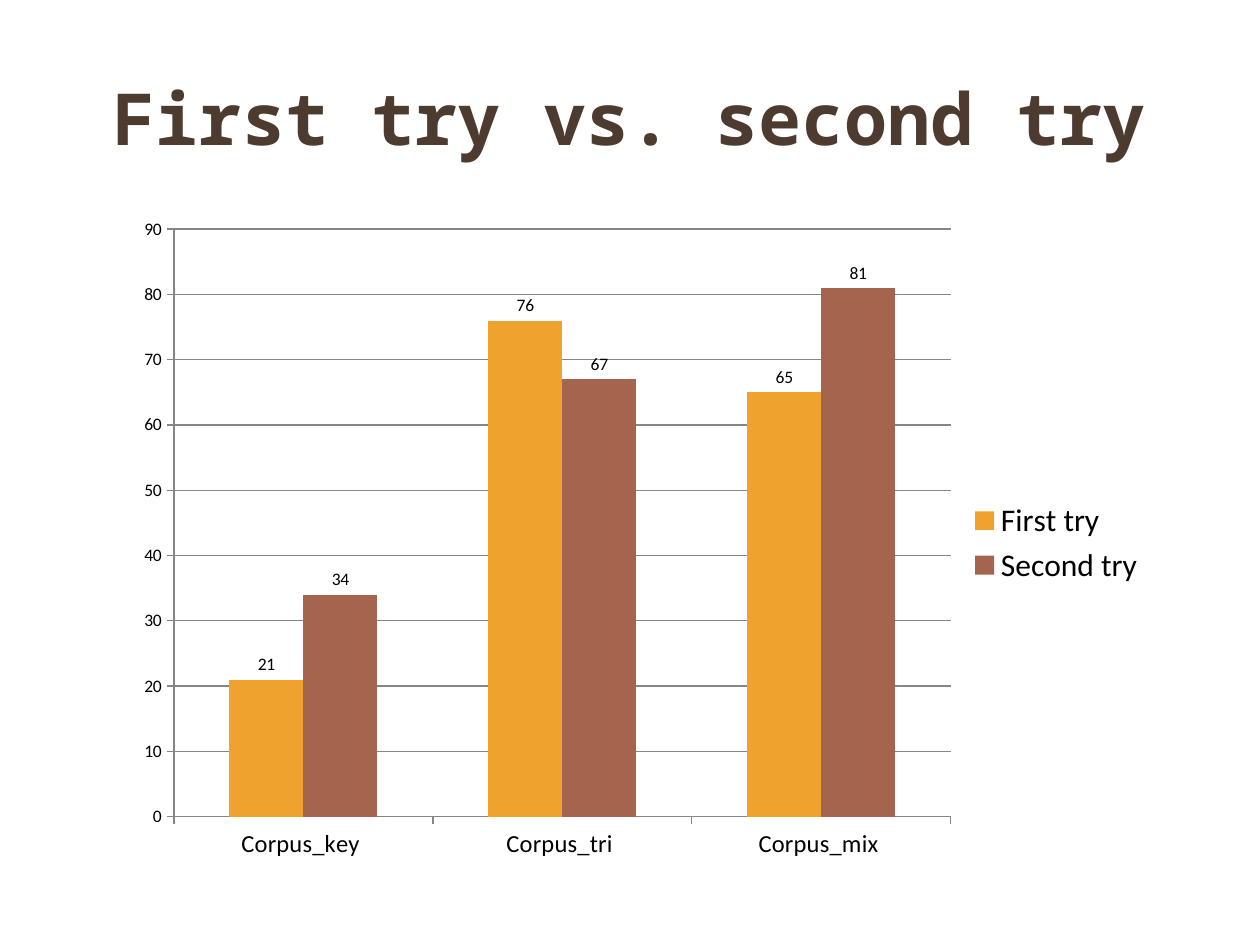
from dataclasses import dataclass

from lxml.etree import SubElement
from pptx import Presentation
from pptx.chart.data import CategoryChartData
from pptx.dml.color import RGBColor
from pptx.enum.chart import XL_CHART_TYPE as ChartType
from pptx.enum.chart import XL_LABEL_POSITION as LabelPosition
from pptx.enum.chart import XL_LEGEND_POSITION as LegendPosition
from pptx.enum.chart import XL_TICK_MARK as TickMark
from pptx.enum.text import MSO_ANCHOR, PP_ALIGN
from pptx.oxml.ns import qn
from pptx.util import Inches, Pt


@dataclass(frozen=True)
class Theme:
    title_font: str = "Noto Sans Mono"
    chart_font: str = "Calibri"
    title_color: RGBColor = RGBColor(0x4E, 0x3B, 0x30)
    text_color: RGBColor = RGBColor(0, 0, 0)
    line_color: RGBColor = RGBColor(0x86, 0x86, 0x86)
    series_colors: tuple = (RGBColor(0xF0, 0xA2, 0x2E), RGBColor(0xA5, 0x64, 0x4E))
    title_size: Pt = Pt(41)
    label_size: Pt = Pt(10)
    category_size: Pt = Pt(14)
    legend_size: Pt = Pt(18)


THEME = Theme()
CATEGORIES = ("Corpus_key ", "Corpus_tri ", "Corpus_mix ")
TRIES = {"First try": (21, 76, 65), "Second try": (34, 67, 81)}


def set_title(page, text):
    """Place and format the slide title."""
    title = page.shapes.title
    title.left, title.top = Inches(0.5), Inches(0.3)
    title.width, title.height = Inches(9), Inches(1.25)
    frame = title.text_frame
    frame.text = text
    frame.word_wrap = True
    frame.vertical_anchor = MSO_ANCHOR.MIDDLE
    para = frame.paragraphs[0]
    para.alignment = PP_ALIGN.CENTER
    font = para.runs[0].font
    font.name, font.size, font.bold = THEME.title_font, THEME.title_size, True
    font.color.rgb = THEME.title_color


def set_plot_layout(chart, **fractions):
    """Fix the inner plot area as fractions of the chart frame."""
    plot_area = chart.element.find(".//" + qn("c:plotArea"))
    for old_layout in plot_area.findall(qn("c:layout")):
        plot_area.remove(old_layout)
    layout = SubElement(plot_area, qn("c:layout"))
    plot_area.insert(0, layout)
    manual = SubElement(layout, qn("c:manualLayout"))
    settings = {"layoutTarget": "inner", "xMode": "edge", "yMode": "edge", **fractions}
    for name, value in settings.items():
        SubElement(manual, qn(f"c:{name}")).set("val", str(value))


def style_axes(chart):
    """Format both axes, the value scale and the gridlines."""
    for axis in (chart.category_axis, chart.value_axis):
        axis.major_tick_mark = TickMark.OUTSIDE
        axis.minor_tick_mark = TickMark.NONE
        axis.format.line.color.rgb = THEME.line_color
    chart.category_axis.tick_labels.font.size = THEME.category_size
    scale = chart.value_axis
    scale.minimum_scale, scale.maximum_scale, scale.major_unit = 0, 90, 10
    scale.has_major_gridlines = True
    scale.major_gridlines.format.line.color.rgb = THEME.line_color


def style_series(plot):
    """Colour the columns and show their values."""
    plot.gap_width, plot.overlap = 150, 0
    plot.vary_by_categories = False
    for series, color in zip(plot.series, THEME.series_colors):
        series.format.fill.solid()
        series.format.fill.fore_color.rgb = color
        series.data_labels.show_value = True
        series.data_labels.position = LabelPosition.OUTSIDE_END


def add_column_chart(page, categories, tries):
    """Add the clustered columns with a legend at the right."""
    data = CategoryChartData()
    data.categories = categories
    for name, values in tries.items():
        data.add_series(name, values)
    chart = page.shapes.add_chart(
        ChartType.COLUMN_CLUSTERED,
        Inches(0.97), Inches(1.66), Inches(8.22), Inches(5.3), data,
    ).chart
    chart.has_title = False
    chart.font.name, chart.font.size = THEME.chart_font, THEME.label_size
    chart.font.color.rgb = THEME.text_color
    chart.has_legend = True
    chart.legend.position = LegendPosition.RIGHT
    chart.legend.include_in_layout = False
    chart.legend.font.size = THEME.legend_size
    set_plot_layout(chart, x=0.05, y=0.03, w=0.75, h=0.88)
    style_axes(chart)
    style_series(chart.plots[0])


def main():
    """Build and save the slide."""
    deck = Presentation()
    deck.slide_width, deck.slide_height = Inches(10), Inches(7.5)
    page = deck.slides.add_slide(deck.slide_layouts.get_by_name("Title Only"))
    set_title(page, "First try vs. second try")
    add_column_chart(page, CATEGORIES, TRIES)
    deck.save("out.pptx")


if __name__ == "__main__":
    main()
